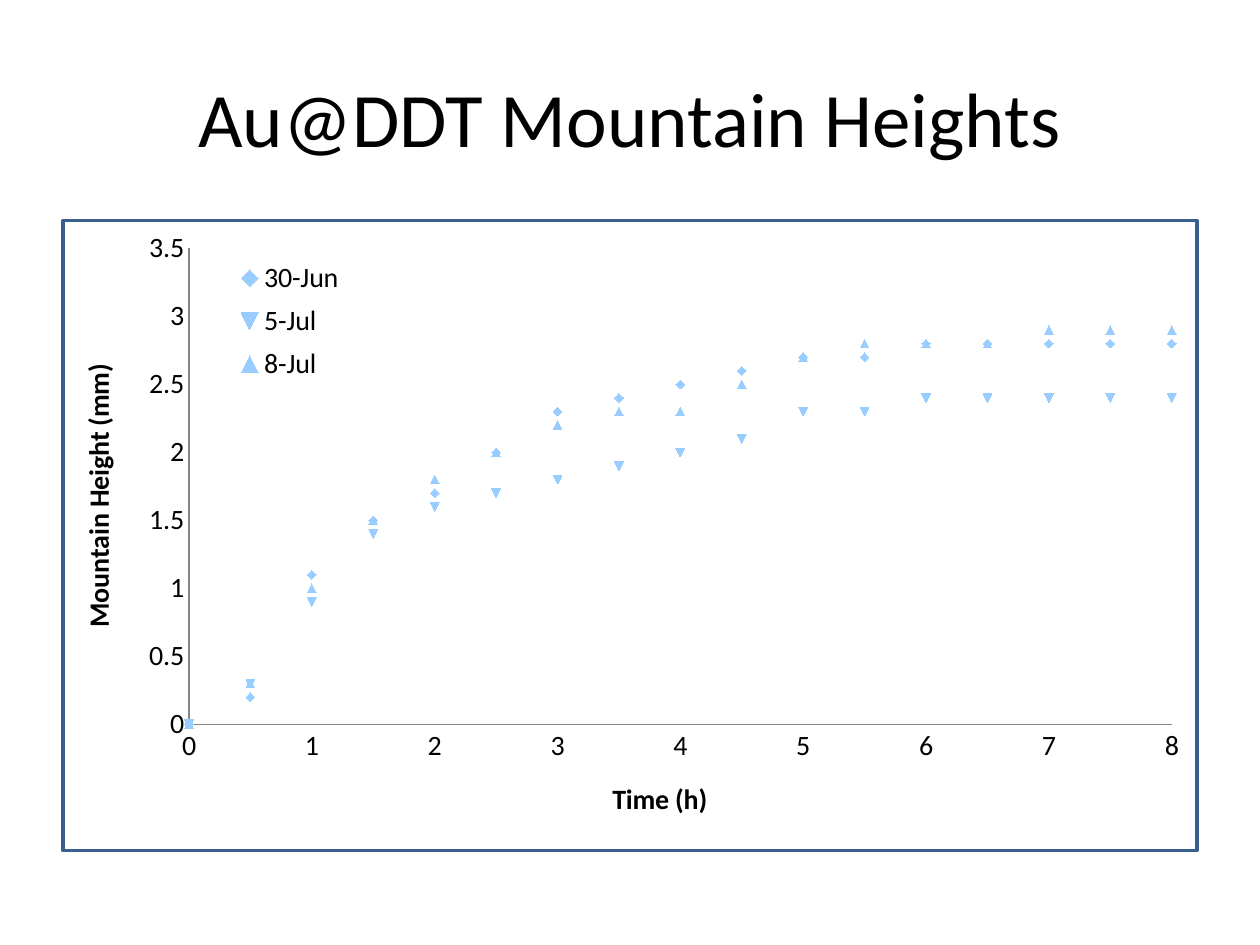
from lxml import etree
from pptx import Presentation
from pptx.chart.data import XyChartData
from pptx.dml.color import RGBColor
from pptx.enum.chart import XL_CHART_TYPE, XL_LEGEND_POSITION, XL_MARKER_STYLE, XL_TICK_MARK
from pptx.enum.shapes import MSO_SHAPE
from pptx.enum.text import MSO_ANCHOR, PP_ALIGN
from pptx.oxml.ns import qn
from pptx.util import Inches, Pt

SCATTER = XL_CHART_TYPE.XY_SCATTER
RIGHT = XL_LEGEND_POSITION.RIGHT
AUTOMATIC = XL_MARKER_STYLE.AUTOMATIC
NO_TICK = XL_TICK_MARK.NONE
RECTANGLE = MSO_SHAPE.RECTANGLE
MIDDLE = MSO_ANCHOR.MIDDLE
CENTER = PP_ALIGN.CENTER

HEIGHTS = {
    "30-Jun": [0, 0.2, 1.1, 1.5, 1.7, 2, 2.3, 2.4, 2.5, 2.6, 2.7, 2.7, 2.8,
               2.8, 2.8, 2.8, 2.8],
    "5-Jul": [0, 0.3, 0.9, 1.4, 1.6, 1.7, 1.8, 1.9, 2, 2.1, 2.3, 2.3, 2.4,
              2.4, 2.4, 2.4, 2.4],
    "8-Jul": [0, 0.3, 1, 1.5, 1.8, 2, 2.2, 2.3, 2.3, 2.5, 2.7, 2.8, 2.8,
              2.8, 2.9, 2.9, 2.9],
}
HOURS_PER_READING = 0.5


def color(hex_string):
    return RGBColor.from_string(hex_string)


def place(element, x, y, width=None, height=None, inner=False):
    """Give a chart part a manual layout, in shares of the chart's size."""
    layout = element.find(qn("c:layout"))
    if layout is None:
        layout = etree.Element(qn("c:layout"))
        overlay = element.find(qn("c:overlay"))
        element.insert(0 if overlay is None else element.index(overlay), layout)
    manual = etree.SubElement(layout, qn("c:manualLayout"))
    settings = [("xMode", "edge"), ("yMode", "edge"),
                ("x", x), ("y", y), ("w", width), ("h", height)]
    if inner:
        settings.insert(0, ("layoutTarget", "inner"))
    for name, value in settings:
        if value is not None:
            etree.SubElement(manual, qn(f"c:{name}")).set("val", str(value))


class SlideBuilder:
    font_name = "Calibri"
    text_color = "000000"
    marker_color = "99CCFF"
    axis_color = "868686"
    chart_text_size = 16

    def __init__(self, presentation):
        self.width = presentation.slide_width
        self.height = presentation.slide_height
        self.slide = presentation.slides.add_slide(presentation.slide_layouts[6])

    def box(self, left, top, width, height):
        """Turn shares of the slide's size into lengths."""
        return (round(left * self.width), round(top * self.height),
                round(width * self.width), round(height * self.height))

    def style_font(self, font, size, bold=False):
        font.name = self.font_name
        font.size = Pt(size)
        font.bold = bold
        font.color.rgb = color(self.text_color)

    def title(self, text, area):
        frame = self.slide.shapes.add_textbox(*self.box(*area)).text_frame
        frame.word_wrap = True
        frame.vertical_anchor = MIDDLE
        paragraph = frame.paragraphs[0]
        paragraph.text = text
        paragraph.alignment = CENTER
        self.style_font(paragraph.font, 44)

    def panel(self, area, fill, line):
        shape = self.slide.shapes.add_shape(RECTANGLE, *self.box(*area))
        shape.shadow.inherit = False
        shape.fill.solid()
        shape.fill.fore_color.rgb = color(fill)
        shape.line.color.rgb = color(line)
        shape.line.width = Pt(2)

    def axis(self, axis, title, maximum, step, title_position):
        axis.minimum_scale = 0
        axis.maximum_scale = maximum
        axis.major_unit = step
        axis.has_major_gridlines = False
        axis.major_tick_mark = axis.minor_tick_mark = NO_TICK
        axis.format.line.color.rgb = color(self.axis_color)
        axis.format.line.width = Pt(0.75)
        self.style_font(axis.tick_labels.font, self.chart_text_size)
        paragraph = axis.axis_title.text_frame.paragraphs[0]
        paragraph.text = title
        self.style_font(paragraph.font, self.chart_text_size, bold=True)
        place(axis.axis_title._element, *title_position)

    def scatter(self, area, heights):
        data = XyChartData()
        for day, readings in heights.items():
            series = data.add_series(day)
            for index, height in enumerate(readings):
                series.add_data_point(index * HOURS_PER_READING, height)
        chart = self.slide.shapes.add_chart(SCATTER, *self.box(*area), data).chart
        chart.has_title = False
        self.style_font(chart.font, 10)
        plot = chart.plots[0]
        plot.vary_by_categories = False
        for series in plot.series:
            series.smooth = False
            series.format.line.fill.background()
            series.marker.style = AUTOMATIC
            series.marker.size = 5
            series.marker.format.fill.solid()
            series.marker.format.fill.fore_color.rgb = color(self.marker_color)
            series.marker.format.line.fill.background()
        self.axis(chart.category_axis, "Time (h)", 8, 1, (0.48, 0.88))
        self.axis(chart.value_axis, "Mountain Height (mm)", 3.5, 0.5, (0.01, 0.22))
        place(chart._chartSpace.chart.plotArea, 1 / 9, 2 / 45, 13 / 15, 34 / 45, inner=True)
        chart.has_legend = True
        chart.legend.position = RIGHT
        chart.legend.include_in_layout = False
        self.style_font(chart.legend.font, self.chart_text_size)
        place(chart.legend._element, 0.14, 0.05, 0.12, 0.22)


def main():
    presentation = Presentation()
    presentation.slide_width = Inches(10)
    presentation.slide_height = Inches(7.5)
    builder = SlideBuilder(presentation)
    chart_area = (0.05, 7 / 30, 0.9, 2 / 3)
    builder.title("Au@DDT Mountain Heights", (0.05, 0.04, 0.9, 1 / 6))
    builder.panel(chart_area, "FFFFFF", "3A5F8C")
    builder.scatter(chart_area, HEIGHTS)
    presentation.save("out.pptx")


if __name__ == "__main__":
    main()
